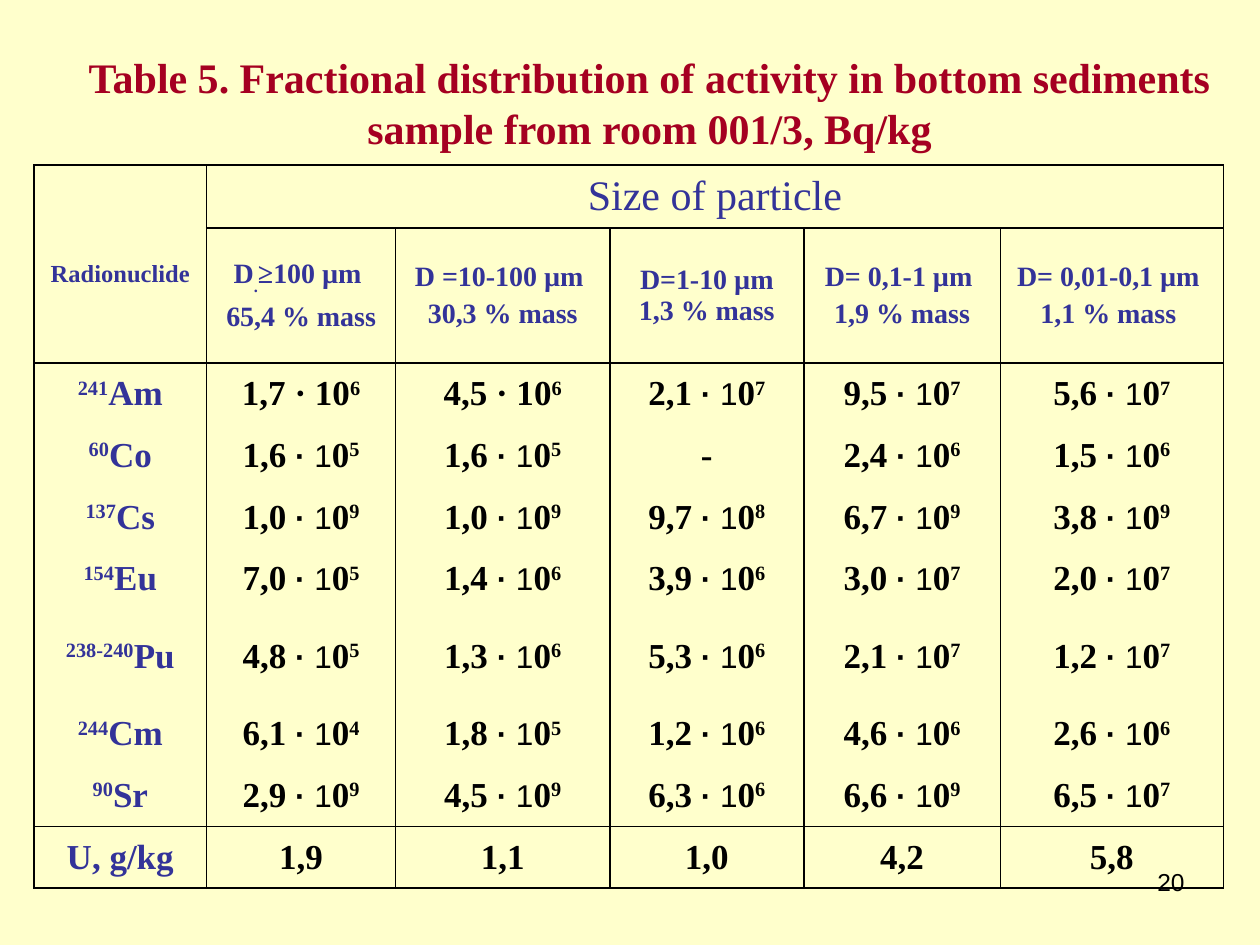
import pptx
import pptx.util
import pptx.dml.color
import pptx.enum.text
import pptx.oxml

Inches, Pt = pptx.util.Inches, pptx.util.Pt
ALIGN = pptx.enum.text.PP_ALIGN
MID = pptx.enum.text.MSO_ANCHOR.MIDDLE
NS = 'xmlns:a="http://schemas.openxmlformats.org/drawingml/2006/main"'
SERIF, BLUE, BLACK = "Times New Roman", "333399", "000000"


def hue(code):
    return pptx.dml.color.RGBColor.from_string(code)


def write(para, text, form, color, base=0):
    run = para.add_run()
    run.text = text
    for key, val in form.items():
        setattr(run.font, key, val)
    run.font.color.rgb = hue(color)
    if base:
        run._r.get_or_add_rPr().set("baseline", str(base * 1000))


# Text formats
head = {"name": SERIF, "size": Pt(24), "bold": True}
wide = {"name": SERIF, "size": Pt(24), "bold": False}
name = {"name": SERIF, "size": Pt(14), "bold": True}
size = {"name": SERIF, "size": Pt(16), "bold": True}
body = {"name": SERIF, "size": Pt(20), "bold": True}
thin = {"name": "Arial", "size": Pt(18), "bold": False}
dot = {"name": "Arial", "size": Pt(18), "bold": True}
page = {"name": "Arial", "size": Pt(14), "bold": False}

deck = pptx.Presentation()
deck.slide_width, deck.slide_height = Inches(10), Inches(7.5)
slide = deck.slides.add_slide(deck.slide_layouts[6])
slide.background.fill.solid()
slide.background.fill.fore_color.rgb = hue("FFFFCC")

# Page number and title
title = ("Table 5. Fractional distribution of activity in bottom sediments "
         "sample from room 001/3, Bq/kg")
for spot, text, form, color, align in [
    ((7.17, 6.83, 2.33, 0.52), "20", page, BLACK, ALIGN.RIGHT),
    ((0.51, 0.36, 9.29, 0.9), title, head, "A50021", ALIGN.CENTER),
]:
    frame = slide.shapes.add_textbox(*map(Inches, spot)).text_frame
    frame.word_wrap = True
    if form is head:
        frame.vertical_anchor = MID
    frame.paragraphs[0].alignment = align
    write(frame.paragraphs[0], text, form, color)

# Table grid
cols = [1.37, 1.5, 1.7, 1.54, 1.56, 1.77]
rows = [0.5, 1.07] + [0.49] * 4 + [0.74] + [0.49] * 3
grid = slide.shapes.add_table(
    len(rows), len(cols), Inches(0.27), Inches(1.31),
    Inches(sum(cols)), Inches(sum(rows))).table
grid.first_row = grid.horz_banding = False
for col, width in zip(grid.columns, cols):
    col.width = Inches(width)
for row, height in zip(grid.rows, rows):
    row.height = Inches(height)

# Cell fills and borders: no rules between the nuclide rows
for r in range(len(rows)):
    for c in range(len(cols)):
        cell = grid.cell(r, c)
        cell.fill.background()
        cell.vertical_anchor = MID
        cell.text_frame.paragraphs[0].alignment = ALIGN.CENTER
        shown = {"L": True, "R": True, "T": not 3 <= r <= 8, "B": not 2 <= r <= 7}
        for spot, (side, on) in enumerate(shown.items()):
            ink = f'<a:solidFill><a:srgbClr val="{BLACK}"/></a:solidFill>' if on else "<a:noFill/>"
            line = pptx.oxml.parse_xml(f'<a:ln{side} {NS} w="12700">{ink}</a:ln{side}>')
            cell._tc.get_or_add_tcPr().insert(spot, line)

# Header cells
grid.cell(0, 0).merge(grid.cell(1, 0))
grid.cell(0, 1).merge(grid.cell(0, 5))
corner = grid.cell(0, 0)
corner.margin_top = Inches(0.22)
write(corner.text_frame.paragraphs[0], "Radionuclide", name, BLUE)
write(grid.cell(0, 1).text_frame.paragraphs[0], "Size of particle", wide, BLUE)

sizes = [
    ([("D", 0), (".", -30), ("≥100 µm ", 0)], "65,4 % mass", 3.2),
    ([("D =10-100 µm ", 0)], "30,3 % mass", 3.2),
    ([("D=1-10 µm", 0)], "1,3 % mass", 0),
    ([("D= 0,1-1 µm ", 0)], "1,9 % mass", 3.2),
    ([("D= 0,01-0,1 µm ", 0)], "1,1 % mass ", 3.2),
]
for c, (parts, mass, gap) in enumerate(sizes, 1):
    frame = grid.cell(1, c).text_frame
    for text, base in parts:
        write(frame.paragraphs[0], text, size, BLUE, base)
    para = frame.add_paragraph()
    para.alignment = ALIGN.CENTER
    para.space_before = Pt(gap)
    write(para, mass, size, BLUE)

# Nuclide rows: each value is (factor, power of ten)
data = [
    ("241", "Аm", [("1,7", 6), ("4,5", 6), ("2,1", 7), ("9,5", 7), ("5,6", 7)]),
    ("60", "Со", [("1,6", 5), ("1,6", 5), ("-", None), ("2,4", 6), ("1,5", 6)]),
    ("137", "Cs", [("1,0", 9), ("1,0", 9), ("9,7", 8), ("6,7", 9), ("3,8", 9)]),
    ("154", "Eu", [("7,0", 5), ("1,4", 6), ("3,9", 6), ("3,0", 7), ("2,0", 7)]),
    ("238-240", "Pu", [("4,8", 5), ("1,3", 6), ("5,3", 6), ("2,1", 7), ("1,2", 7)]),
    ("244", "Cm", [("6,1", 4), ("1,8", 5), ("1,2", 6), ("4,6", 6), ("2,6", 6)]),
    ("90", "Sr", [("2,9", 9), ("4,5", 9), ("6,3", 6), ("6,6", 9), ("6,5", 7)]),
    ("", "U, g/kg", [(val, None) for val in ("1,9", "1,1", "1,0", "4,2", "5,8")]),
]
for r, (mass, label, values) in enumerate(data, 2):
    para = grid.cell(r, 0).text_frame.paragraphs[0]
    if mass:
        write(para, mass, body, BLUE, 30)
    write(para, label, body, BLUE)
    for c, (factor, power) in enumerate(values, 1):
        para = grid.cell(r, c).text_frame.paragraphs[0]
        if power is None:
            parts = [(factor, body)]
        elif r == 2 and c <= 2:
            parts = [(factor + " · 10", body)]
        else:
            parts = [(factor, body), (" ", thin), ("·", dot), (" 1", thin), ("0", body)]
        for text, form in parts:
            write(para, text, form, BLACK)
        if power:
            write(para, str(power), body, BLACK, 30)

deck.save("out.pptx")
